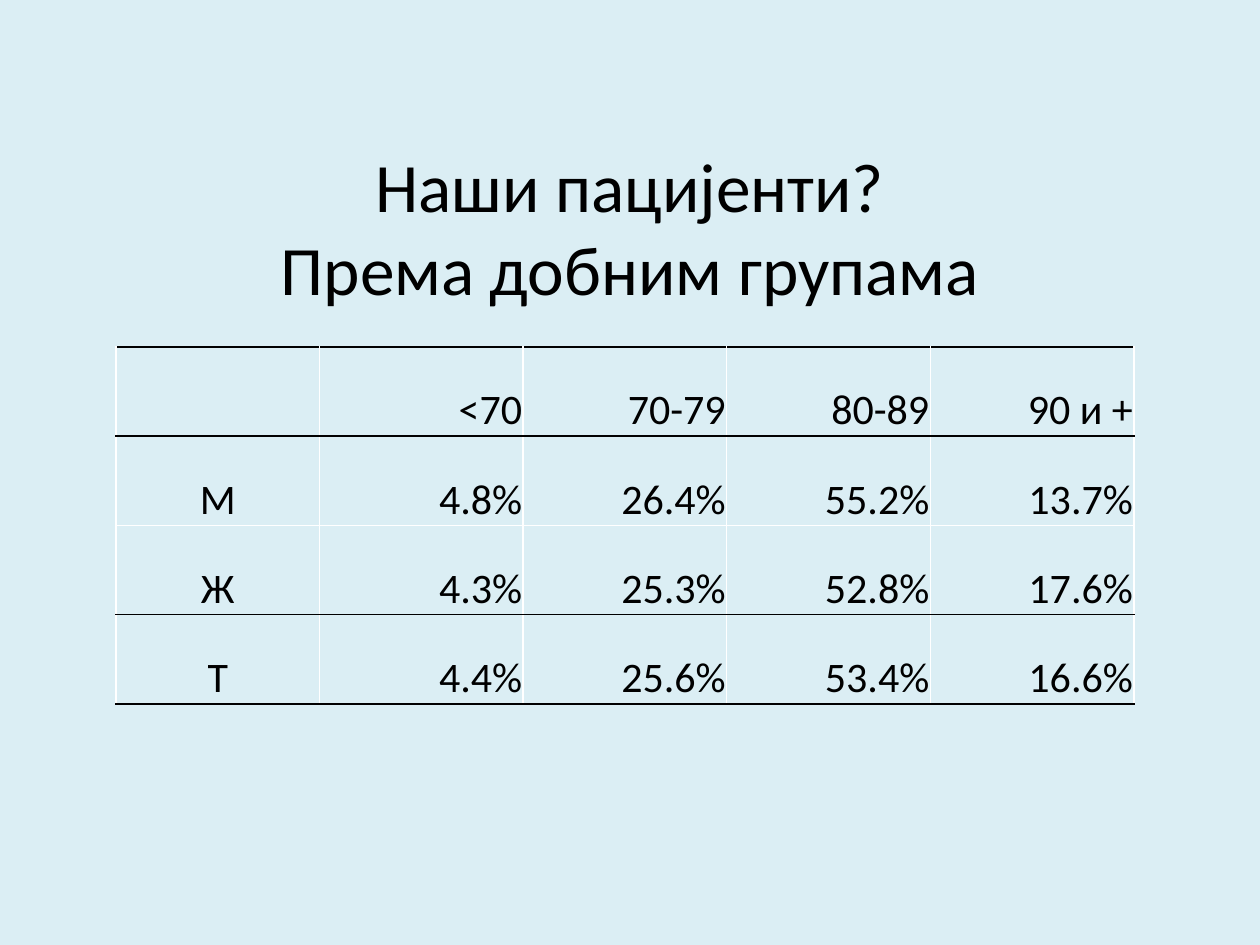
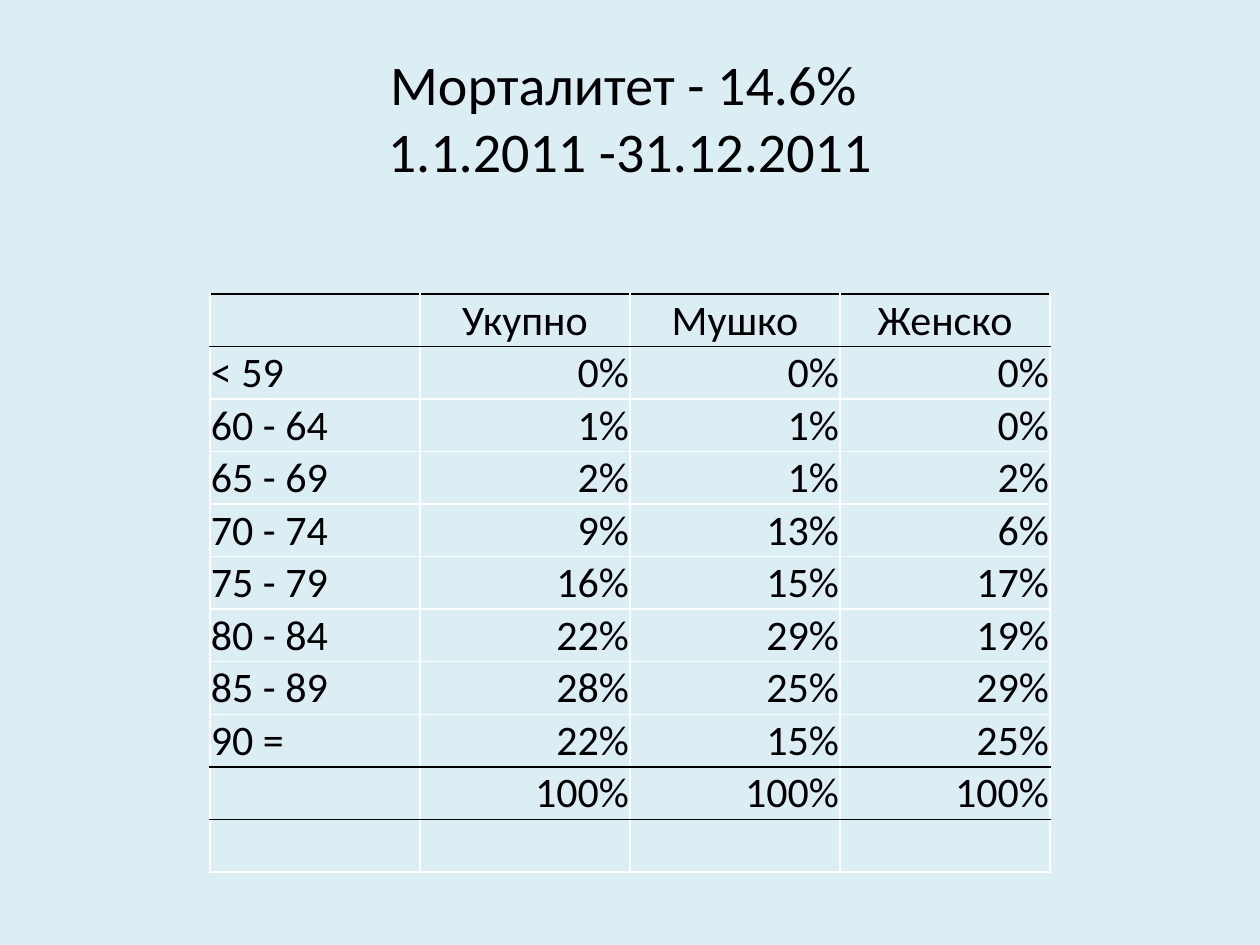
from dataclasses import dataclass

from lxml import etree
from pptx import Presentation
from pptx.dml.color import RGBColor
from pptx.enum.text import MSO_ANCHOR, MSO_AUTO_SIZE, PP_ALIGN
from pptx.oxml.ns import qn
from pptx.slide import Slide
from pptx.table import _Cell
from pptx.util import Emu, Pt

LEFT, CENTER, RIGHT = PP_ALIGN.LEFT, PP_ALIGN.CENTER, PP_ALIGN.RIGHT
MIDDLE, BOTTOM = MSO_ANCHOR.MIDDLE, MSO_ANCHOR.BOTTOM
NO_AUTOFIT = MSO_AUTO_SIZE.NONE

# Shared look
COLORS = {"background": "DBEEF4", "text": "000000", "rule": "000000", "grid": "FFFFFF"}
FONT = "Calibri"
CELL_SIZE = 24
BORDER = Pt(1)
TITLE_ONLY = 5
EMU_PER_PX = 914400 // 126


def px(n: int) -> Emu:
    return Emu(n * EMU_PER_PX)


@dataclass(frozen=True)
class Box:
    left: int
    top: int
    width: int
    height: int

    def emu(self) -> tuple[Emu, ...]:
        return tuple(px(n) for n in (self.left, self.top, self.width, self.height))


@dataclass(frozen=True)
class TitleSpec:
    lines: tuple[str, ...]
    box: Box
    size: float
    bottom_inset: int = 6


@dataclass(frozen=True)
class TableSpec:
    rows: tuple[tuple[str, ...], ...]
    box: Box
    header_align: PP_ALIGN
    label_align: PP_ALIGN
    ruled: frozenset[int]  # horizontal lines drawn dark, counted from the top


# Content
SLIDES = (
    (
        TitleSpec(("Наши пацијенти?", "Према добним групама"),
                  Box(63, 189, 1134, 158), 39.6, bottom_inset=89),
        TableSpec(
            (
                ("", "<70", "70-79", "80-89", "90 и +"),
                ("M", "4.8%", "26.4%", "55.2%", "13.7%"),
                ("Ж", "4.3%", "25.3%", "52.8%", "17.6%"),
                ("T", "4.4%", "25.6%", "53.4%", "16.6%"),
            ),
            Box(116, 347, 1018, 357), RIGHT, CENTER, frozenset({0, 1, 3, 4}),
        ),
    ),
    (
        TitleSpec(("Морталитет - 14.6% ", "1.1.2011 -31.12.2011"),
                  Box(63, 38, 1134, 158), 32),
        TableSpec(
            (
                ("", "Укупно", "Мушко", "Женско"),
                ("< 59", "0%", "0%", "0%"),
                ("60 - 64", "1%", "1%", "0%"),
                ("65 - 69", "2%", "1%", "2%"),
                ("70 - 74", "9%", "13%", "6%"),
                ("75 - 79", "16%", "15%", "17%"),
                ("80 - 84", "22%", "29%", "19%"),
                ("85 - 89", "28%", "25%", "29%"),
                ("90 =", "22%", "15%", "25%"),
                ("", "100%", "100%", "100%"),
                ("", "", "", ""),
            ),
            Box(210, 294, 840, 578), CENTER, LEFT, frozenset({0, 1, 9, 10}),
        ),
    ),
)


def format_runs(p, size: float) -> None:
    for r in p.runs:
        r.font.name = FONT
        r.font.size = Pt(size)
        r.font.color.rgb = RGBColor.from_string(COLORS["text"])


def add_title(s: Slide, spec: TitleSpec) -> None:
    sp = s.shapes.title
    sp.left, sp.top, sp.width, sp.height = spec.box.emu()
    tf = sp.text_frame
    tf.text = "\v".join(spec.lines)
    tf.word_wrap = True
    tf.auto_size = NO_AUTOFIT
    tf.vertical_anchor = MIDDLE
    tf.margin_top, tf.margin_bottom = px(6), px(spec.bottom_inset)
    p = tf.paragraphs[0]
    p.alignment = CENTER
    format_runs(p, spec.size)
    # Line breaks take the size of the text
    for br in p._p.findall(qn("a:br")):
        etree.SubElement(br, qn("a:rPr"), sz=str(round(spec.size * 100)))


def set_borders(cell: _Cell, top: str, bottom: str) -> None:
    sides = {"a:lnL": "grid", "a:lnR": "grid", "a:lnT": top, "a:lnB": bottom}
    tc_pr = cell._tc.get_or_add_tcPr()
    for i, (tag, color) in enumerate(sides.items()):
        ln = etree.Element(qn(tag), w=str(BORDER))
        fill = etree.SubElement(ln, qn("a:solidFill"))
        etree.SubElement(fill, qn("a:srgbClr"), val=COLORS[color])
        tc_pr.insert(i, ln)


def fill_cell(cell: _Cell, text: str, align: PP_ALIGN) -> None:
    cell.fill.background()
    cell.vertical_anchor = BOTTOM
    cell.margin_left = cell.margin_right = cell.margin_top = px(1)
    cell.margin_bottom = 0
    p = cell.text_frame.paragraphs[0]
    p.alignment = align
    if text:
        p.text = text
        format_runs(p, CELL_SIZE)


def add_data_table(s: Slide, spec: TableSpec) -> None:
    n_rows, n_cols = len(spec.rows), len(spec.rows[0])
    table = s.shapes.add_table(n_rows, n_cols, *spec.box.emu()).table
    table.first_row = table.horz_banding = False

    def line_color(i: int) -> str:
        return "rule" if i in spec.ruled else "grid"

    for i, row in enumerate(spec.rows):
        for j, text in enumerate(row):
            align = spec.header_align if i == 0 else spec.label_align if j == 0 else RIGHT
            cell = table.cell(i, j)
            fill_cell(cell, text, align)
            set_borders(cell, line_color(i), line_color(i + 1))


def main() -> None:
    prs = Presentation()
    prs.slide_width, prs.slide_height = px(1260), px(945)
    fill = prs.slide_master.background.fill
    fill.solid()
    fill.fore_color.rgb = RGBColor.from_string(COLORS["background"])
    for title, table in SLIDES:
        s = prs.slides.add_slide(prs.slide_layouts[TITLE_ONLY])
        add_title(s, title)
        add_data_table(s, table)
    prs.save("out.pptx")


if __name__ == "__main__":
    main()
